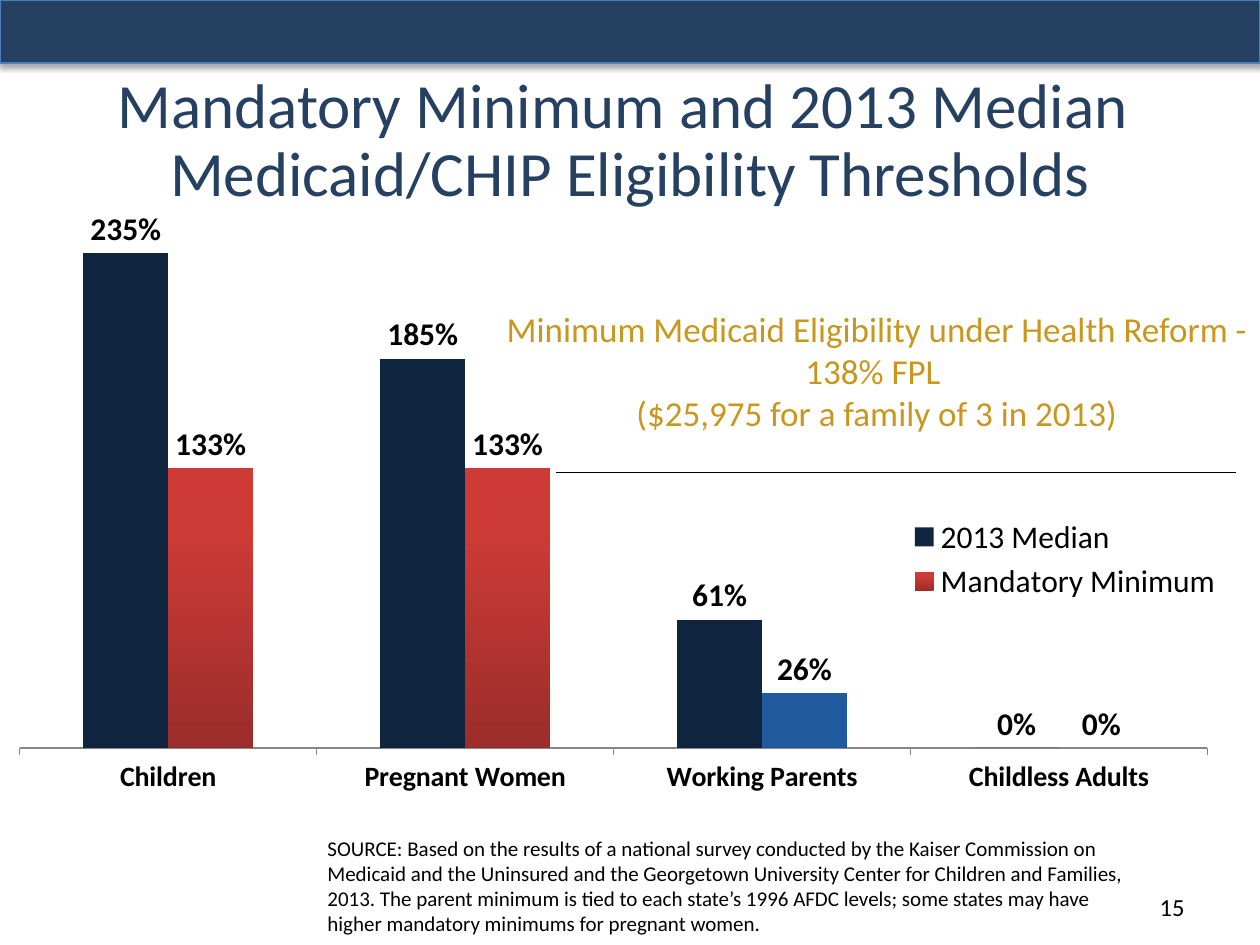
from lxml import etree
from pptx import Presentation
from pptx.chart import data as chart_data
from pptx.dml.color import RGBColor
from pptx.enum import chart as ch, shapes, text
from pptx.oxml import parse_xml
from pptx.oxml.ns import nsdecls, qn
from pptx.util import Pt

NAVY, BLACK, GOLD = "254061", "000000", "C9961E"


def rgb(value):
    return RGBColor.from_string(value)


def set_font(font, size, color=BLACK, bold=False):
    values = {"name": "Calibri", "size": Pt(size), "bold": bold}
    for key, value in values.items():
        setattr(font, key, value)
    font.color.rgb = rgb(color)


prs = Presentation()
prs.slide_width, prs.slide_height = Pt(720), Pt(540)
s = prs.slides.add_slide(prs.slide_layouts[5])

# Title
title = s.shapes.title
box = {"left": Pt(0), "top": Pt(36), "width": Pt(720), "height": Pt(90)}
for key, value in box.items():
    setattr(title, key, value)
tf = title.text_frame
tf.text = "Mandatory Minimum and 2013 Median \vMedicaid/CHIP Eligibility Thresholds"
frame = {"word_wrap": True, "auto_size": text.MSO_AUTO_SIZE.NONE,
         "vertical_anchor": text.MSO_ANCHOR.MIDDLE}
for key, value in frame.items():
    setattr(tf, key, value)
p = tf.paragraphs[0]
p.alignment, p.line_spacing = text.PP_ALIGN.CENTER, 0.9
for r in p.runs:
    set_font(r.font, 36, NAVY)

# Eligibility chart
cd = chart_data.CategoryChartData(number_format="0%")
cd.categories = ["Children", "Pregnant Women", "Working Parents", "Childless Adults"]
cd.add_series("2013 Median", [2.35, 1.85, 0.61, 0])
cd.add_series("Mandatory Minimum", [1.33, 1.33, 0.26, 0])
chart = s.shapes.add_chart(ch.XL_CHART_TYPE.COLUMN_CLUSTERED, Pt(0), Pt(120.25),
                           Pt(707.75), Pt(365.75), cd).chart
set_font(chart.font, 18)
chart.has_title = False
plot = chart.plots[0]
for key, value in {"gap_width": 150, "overlap": 0, "vary_by_categories": False}.items():
    setattr(plot, key, value)

# Bar fills and value labels
median, minimum = plot.series
median.format.fill.solid()
median.format.fill.fore_color.rgb = rgb("0F243E")
fill = minimum.format.fill
fill.gradient()
fill.gradient_angle = 90
for stop, color, position in zip(fill.gradient_stops, ["9B2D2A", "CE3B37"], [0, 0.8]):
    stop.color.rgb = rgb(color)
    stop.position = position
fill = minimum.points[2].format.fill
fill.solid()
fill.fore_color.rgb = rgb("20599D")
for series in plot.series:
    series.invert_if_negative = False
    labels = series.data_labels
    values = {"show_value": True, "number_format": "0%",
              "number_format_is_linked": False,
              "position": ch.XL_LABEL_POSITION.OUTSIDE_END}
    for key, value in values.items():
        setattr(labels, key, value)
    set_font(labels.font, 18, bold=True)

# Axes and legend
axis = chart.category_axis
axis.major_tick_mark = ch.XL_TICK_MARK.OUTSIDE
axis.format.line.color.rgb = rgb("868686")
set_font(axis.tick_labels.font, 16, bold=True)
axis = chart.value_axis
for key, value in {"minimum_scale": 0, "maximum_scale": 2.5,
                   "has_major_gridlines": False, "visible": False}.items():
    setattr(axis, key, value)
chart.has_legend = True
legend = chart.legend
legend.position = ch.XL_LEGEND_POSITION.RIGHT
legend.include_in_layout = True
set_font(legend.font, 18)

# Fixed places for the plot area and the legend
plot_area = chart.element.find(".//" + qn("c:plotArea"))
legend_xml = chart.element.find(".//" + qn("c:legend"))
for parent, index, target, place in [
        (plot_area, 0, "inner", (0.016, 0.018, 0.959, 0.822)),
        (legend_xml, 1, None, (0.73, 0.47, 0.26, 0.15))]:
    for old in parent.findall(qn("c:layout")):
        parent.remove(old)
    layout = parse_xml(f"<c:layout {nsdecls('c')}><c:manualLayout/></c:layout>")
    settings = [("layoutTarget", target)] if target else []
    settings += [("xMode", "edge"), ("yMode", "edge"), *zip("xywh", place)]
    for tag, value in settings:
        etree.SubElement(layout[0], qn(f"c:{tag}")).set("val", str(value))
    parent.insert(index, layout)

# Reform note, source and slide number
MIDDLE, TOP = text.MSO_ANCHOR.MIDDLE, text.MSO_ANCHOR.TOP
LEFT, CENTER, RIGHT = text.PP_ALIGN.LEFT, text.PP_ALIGN.CENTER, text.PP_ALIGN.RIGHT
for place, size, color, align, anchor, lines in [
        ((282.25, 172, 437.75, 80), 20, GOLD, CENTER, TOP,
         ["Minimum Medicaid Eligibility under Health Reform - 138% FPL ",
          "($25,975 for a family of 3 in 2013)"]),
        ((180, 473.75, 480, 65.5), 12, BLACK, LEFT, TOP,
         ["SOURCE: Based on the results of a national survey conducted by the Kaiser "
          "Commission on Medicaid and the Uninsured and the Georgetown University Center "
          "for Children and Families, 2013. The parent minimum is tied to each state’s "
          "1996 AFDC levels; some states may have higher mandatory minimums for pregnant "
          "women."]),
        ((516, 504, 168, 28.75), 14, BLACK, RIGHT, MIDDLE, ["15"])]:
    tf = s.shapes.add_textbox(*map(Pt, place)).text_frame
    tf.word_wrap, tf.vertical_anchor = True, anchor
    tf.text = "\n".join(lines)
    for p in tf.paragraphs:
        p.alignment = align
        set_font(p.runs[0].font, size, color)

# Line at the reform threshold
line = s.shapes.add_connector(shapes.MSO_CONNECTOR.STRAIGHT,
                              Pt(318), Pt(270), Pt(706.25), Pt(270))
line.line.color.rgb, line.line.width = rgb(BLACK), Pt(0.75)
etree.SubElement(line.element.spPr, qn("a:effectLst"))

# Top band with a soft shadow
sp = s.shapes.add_shape(shapes.MSO_SHAPE.RECTANGLE, Pt(0), Pt(0), Pt(720), Pt(36))
sp.fill.solid()
sp.fill.fore_color.rgb = rgb(NAVY)
sp.line.color.rgb, sp.line.width = rgb("4B7EBC"), Pt(0.75)
sp.shadow.inherit = False
sp.element.spPr.find(qn("a:effectLst")).append(parse_xml(
    f'<a:outerShdw {nsdecls("a")} blurRad="{Pt(3.1)}" dist="{Pt(1.8)}" dir="5400000" '
    f'rotWithShape="0"><a:srgbClr val="{BLACK}"><a:alpha val="35000"/></a:srgbClr>'
    '</a:outerShdw>'))

prs.save("out.pptx")
